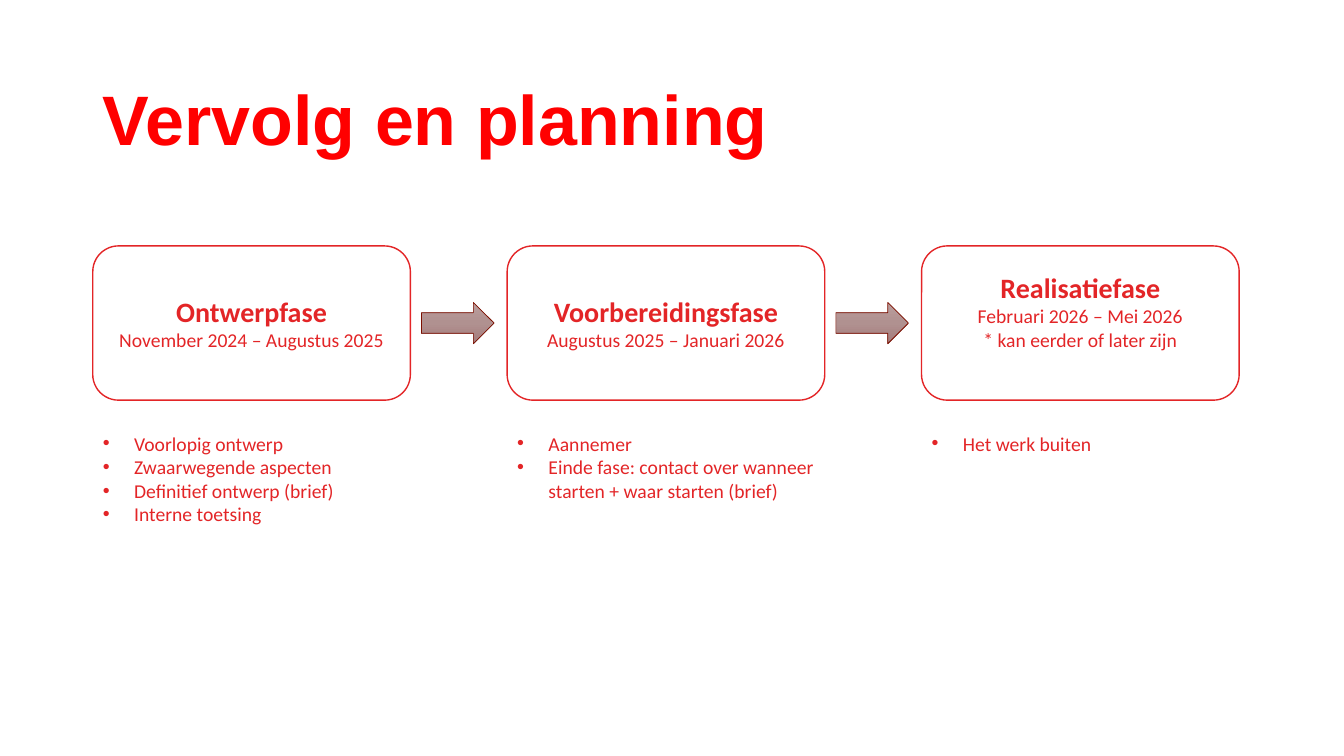
import copy
from dataclasses import dataclass

import lxml.etree
import pptx
import pptx.dml.color
import pptx.enum.shapes
import pptx.enum.text
import pptx.oxml.ns
import pptx.shapes.autoshape
import pptx.shapes.placeholder
import pptx.slide
import pptx.text.text
import pptx.util

RED, TITLE_RED, WHITE, ARROW_EDGE = "E32527", "FF0000", "FFFFFF", "7D0F00"
ARROW_SHADES = ("BB9E9D", "B09190", "A57C7C")

# Grid in inches: one column per phase
LEFT, COLUMN_STEP = 0.92, 4.11
PHASE_TOP, PHASE_WIDTH, PHASE_HEIGHT = 2.44, 3.15, 1.53
ARROW_TOP, ARROW_WIDTH, ARROW_HEIGHT, ARROW_GAP = 3.0, 0.72, 0.41, 0.11
STEPS_TOP, STEPS_WIDTH, STEP_LINE = 4.23, 3.27, 0.235
BULLET_INDENT, INSET = 0.31, 0.05


@dataclass(frozen=True)
class Phase:
    name: str
    details: tuple[str, ...]
    steps: tuple[str, ...]
    step_lines: int
    raised_by: float = 0  # extra bottom inset that lifts the centred text


PHASES = (
    Phase("Ontwerpfase", ("November 2024 – Augustus 2025",),
          ("Voorlopig ontwerp", "Zwaarwegende aspecten",
           "Definitief ontwerp (brief)", "Interne toetsing"), 4),
    Phase("Voorbereidingsfase", ("Augustus 2025 – Januari 2026",),
          ("Aannemer",
           "Einde fase: contact over wanneer starten + waar starten (brief)"), 3),
    Phase("Realisatiefase",
          ("Februari 2026 – Mei 2026", "* kan eerder of later zijn"),
          ("Het werk buiten",), 1, raised_by=0.24),
)


def color(value: str) -> pptx.dml.color.RGBColor:
    return pptx.dml.color.RGBColor.from_string(value)


def inches(*lengths: float) -> list[pptx.util.Length]:
    return [pptx.util.Inches(length) for length in lengths]


def place(shape: pptx.shapes.placeholder.SlidePlaceholder, *box: float) -> None:
    shape.left, shape.top, shape.width, shape.height = inches(*box)


def style(paragraph: pptx.text.text._Paragraph, size: float, bold: bool = False,
          family: str = "Calibri", hue: str = RED) -> None:
    paragraph.space_before = pptx.util.Pt(0)
    font = paragraph.font
    font.name, font.size, font.bold = family, pptx.util.Pt(size), bold
    font.color.rgb = color(hue)


def add_bullet(paragraph: pptx.text.text._Paragraph) -> None:
    properties = paragraph._p.get_or_add_pPr()
    indent = pptx.util.Inches(BULLET_INDENT)
    properties.set("marL", str(indent))
    properties.set("indent", str(-indent))
    qn = pptx.oxml.ns.qn
    lxml.etree.SubElement(properties, qn("a:buFont"), typeface="Arial")
    lxml.etree.SubElement(properties, qn("a:buChar"), char="•")


def add_outlined(slide: pptx.slide.Slide, kind: pptx.enum.shapes.MSO_SHAPE,
                 edge: str, weight: float,
                 *box: float) -> pptx.shapes.autoshape.Shape:
    shape = slide.shapes.add_shape(kind, *inches(*box))
    shape.shadow.inherit = False
    shape.line.color.rgb = color(edge)
    shape.line.width = pptx.util.Pt(weight)
    return shape


def add_phase(slide: pptx.slide.Slide, phase: Phase, left: float) -> None:
    box = add_outlined(slide, pptx.enum.shapes.MSO_SHAPE.ROUNDED_RECTANGLE, RED, 1,
                       left, PHASE_TOP, PHASE_WIDTH, PHASE_HEIGHT)
    box.fill.solid()
    box.fill.fore_color.rgb = color(WHITE)
    frame = box.text_frame
    frame.word_wrap = True
    frame.vertical_anchor = pptx.enum.text.MSO_ANCHOR.MIDDLE
    frame.margin_bottom = pptx.util.Inches(INSET + phase.raised_by)
    frame.text = "\n".join((phase.name, *phase.details))
    for row, paragraph in enumerate(frame.paragraphs):
        paragraph.alignment = pptx.enum.text.PP_ALIGN.CENTER
        style(paragraph, 14 if row else 20, bold=row == 0)


def fill_steps(body: pptx.shapes.placeholder.SlidePlaceholder, phase: Phase,
               left: float) -> None:
    place(body, left, STEPS_TOP, STEPS_WIDTH,
          2 * INSET + phase.step_lines * STEP_LINE)
    frame = body.text_frame
    frame.word_wrap = True
    frame.auto_size = pptx.enum.text.MSO_AUTO_SIZE.SHAPE_TO_FIT_TEXT
    frame.vertical_anchor = pptx.enum.text.MSO_ANCHOR.TOP
    frame.text = "\n".join(phase.steps)
    for paragraph in frame.paragraphs:
        add_bullet(paragraph)
        style(paragraph, 14)


def add_arrow(slide: pptx.slide.Slide, left: float) -> None:
    arrow = add_outlined(slide, pptx.enum.shapes.MSO_SHAPE.RIGHT_ARROW, ARROW_EDGE,
                         0.5, left, ARROW_TOP, ARROW_WIDTH, ARROW_HEIGHT)
    arrow.fill.gradient()
    arrow.fill.gradient_angle = 270
    first_stop = arrow.fill.gradient_stops[0]._gs
    first_stop.addnext(copy.deepcopy(first_stop))
    for stop, shade, position in zip(arrow.fill.gradient_stops, ARROW_SHADES,
                                     (0, 0.5, 1)):
        stop.color.rgb = color(shade)
        stop.position = position


def add_title(slide: pptx.slide.Slide) -> None:
    title = slide.shapes.title
    place(title, LEFT, 0.68, 11.5, 1.07)
    title.text_frame.text = "Vervolg en planning"
    title.text_frame.vertical_anchor = pptx.enum.text.MSO_ANCHOR.MIDDLE
    heading = title.text_frame.paragraphs[0]
    heading.alignment = pptx.enum.text.PP_ALIGN.LEFT
    heading.line_spacing = 0.9
    style(heading, 50, bold=True, family="Arial", hue=TITLE_RED)


def main() -> None:
    presentation = pptx.Presentation()
    presentation.slide_width, presentation.slide_height = inches(13.33, 7.5)
    comparison = presentation.slide_layouts.get_by_name("Comparison")
    slide = presentation.slides.add_slide(comparison)
    add_title(slide)

    _, *bodies = slide.placeholders
    for column, (phase, body) in enumerate(zip(PHASES, bodies)):
        left = LEFT + column * COLUMN_STEP
        add_phase(slide, phase, left)
        fill_steps(body, phase, left)
        if column < len(PHASES) - 1:
            add_arrow(slide, left + PHASE_WIDTH + ARROW_GAP)
    for unused in bodies[len(PHASES):]:
        unused.element.getparent().remove(unused.element)

    presentation.save("out.pptx")


if __name__ == "__main__":
    main()
